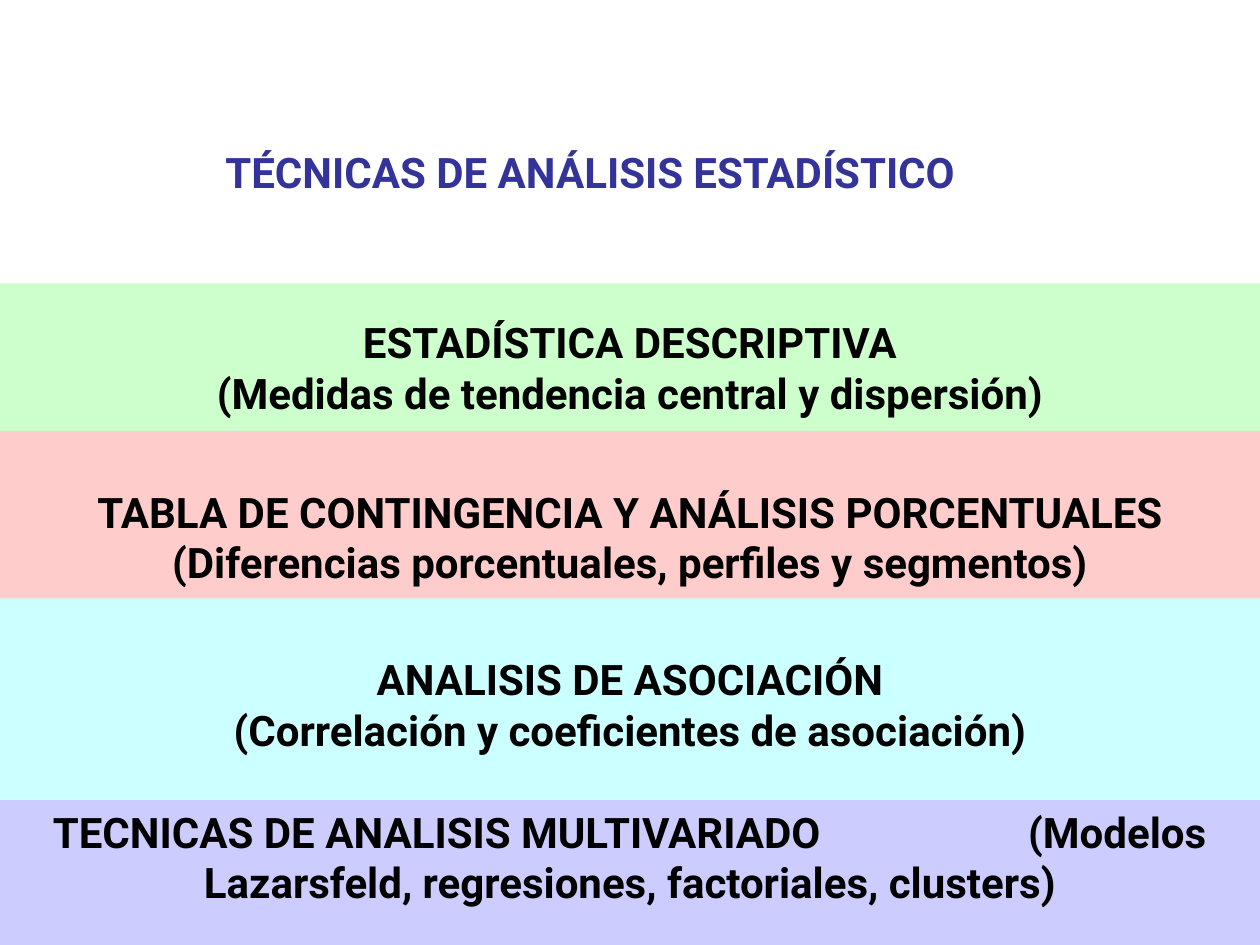
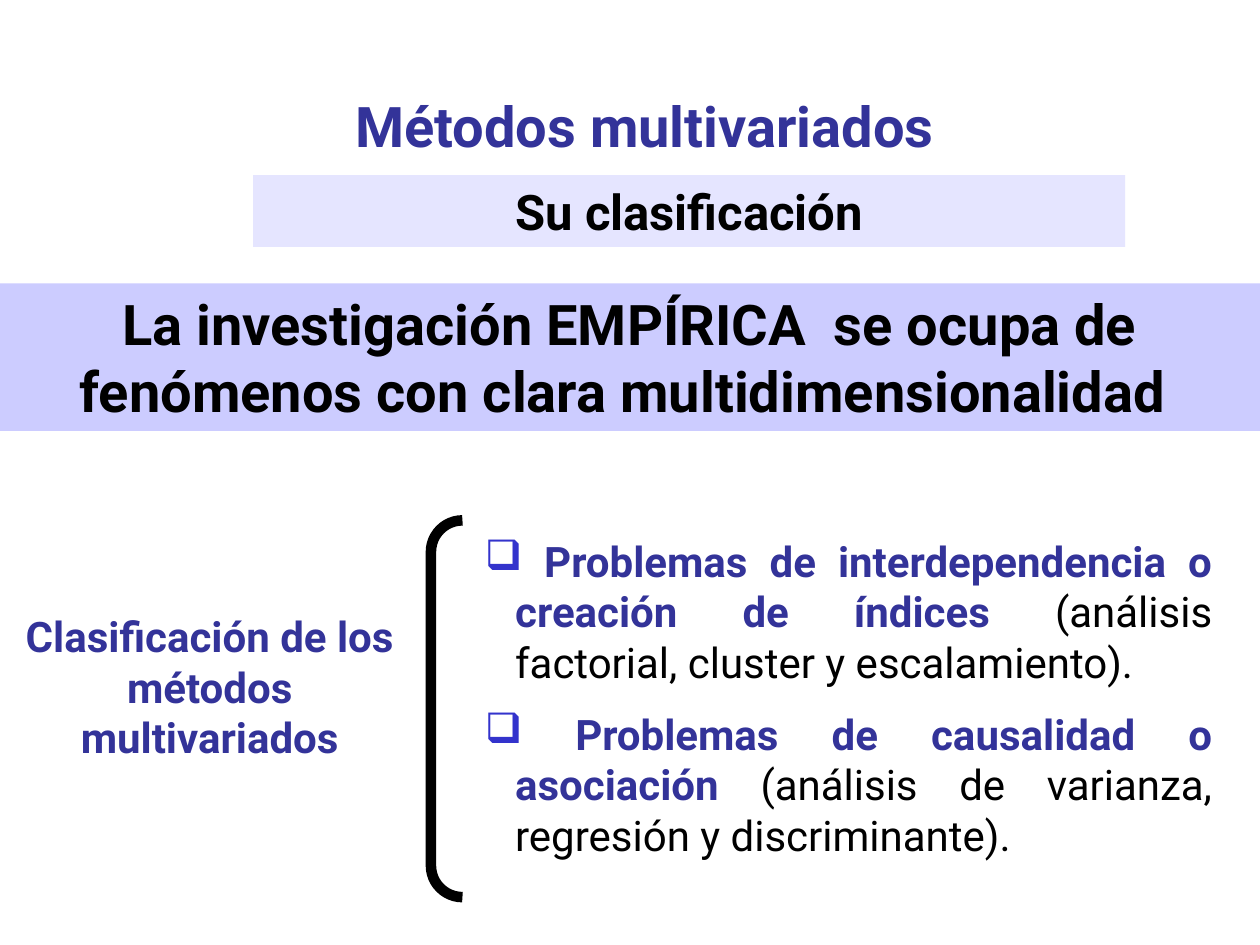
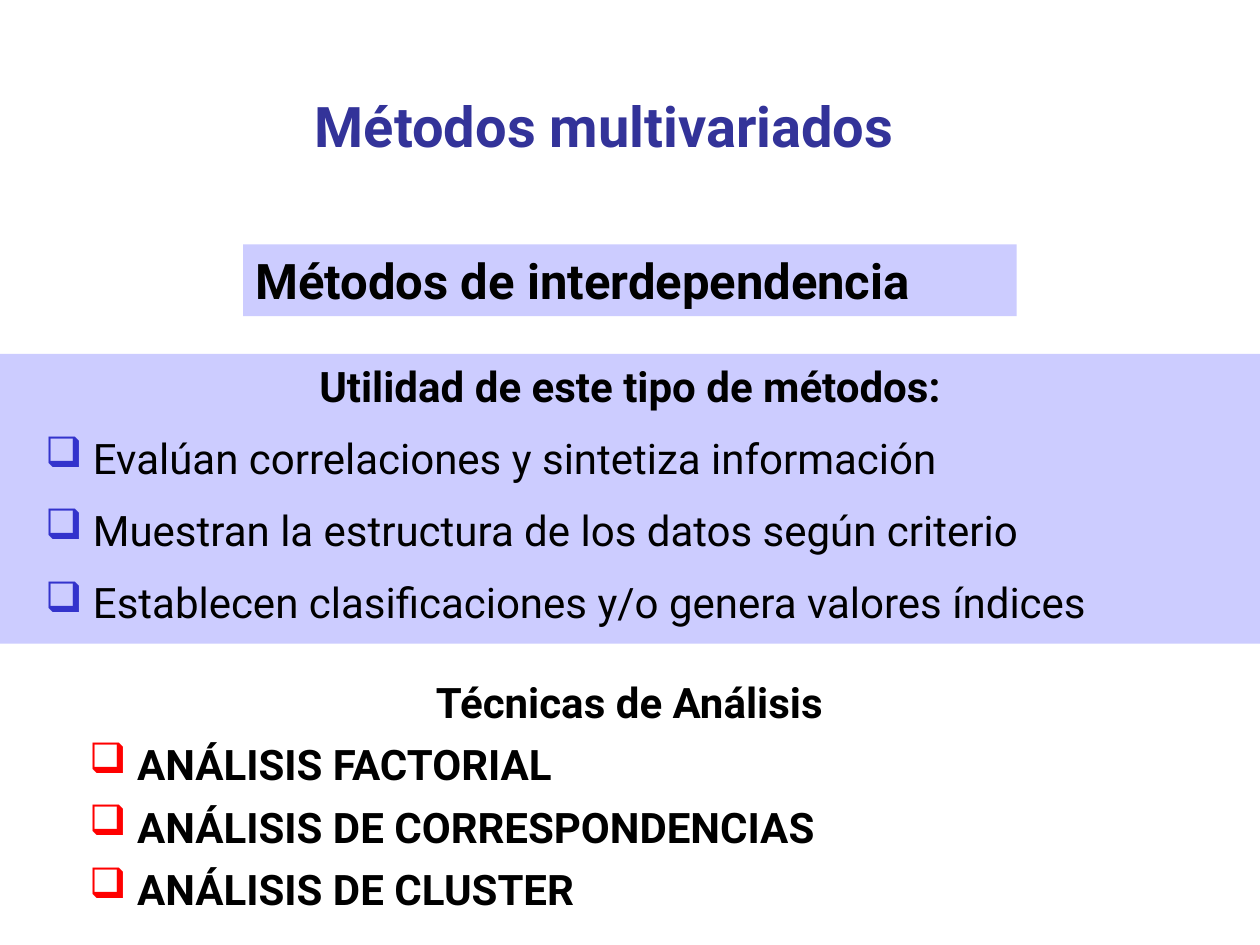
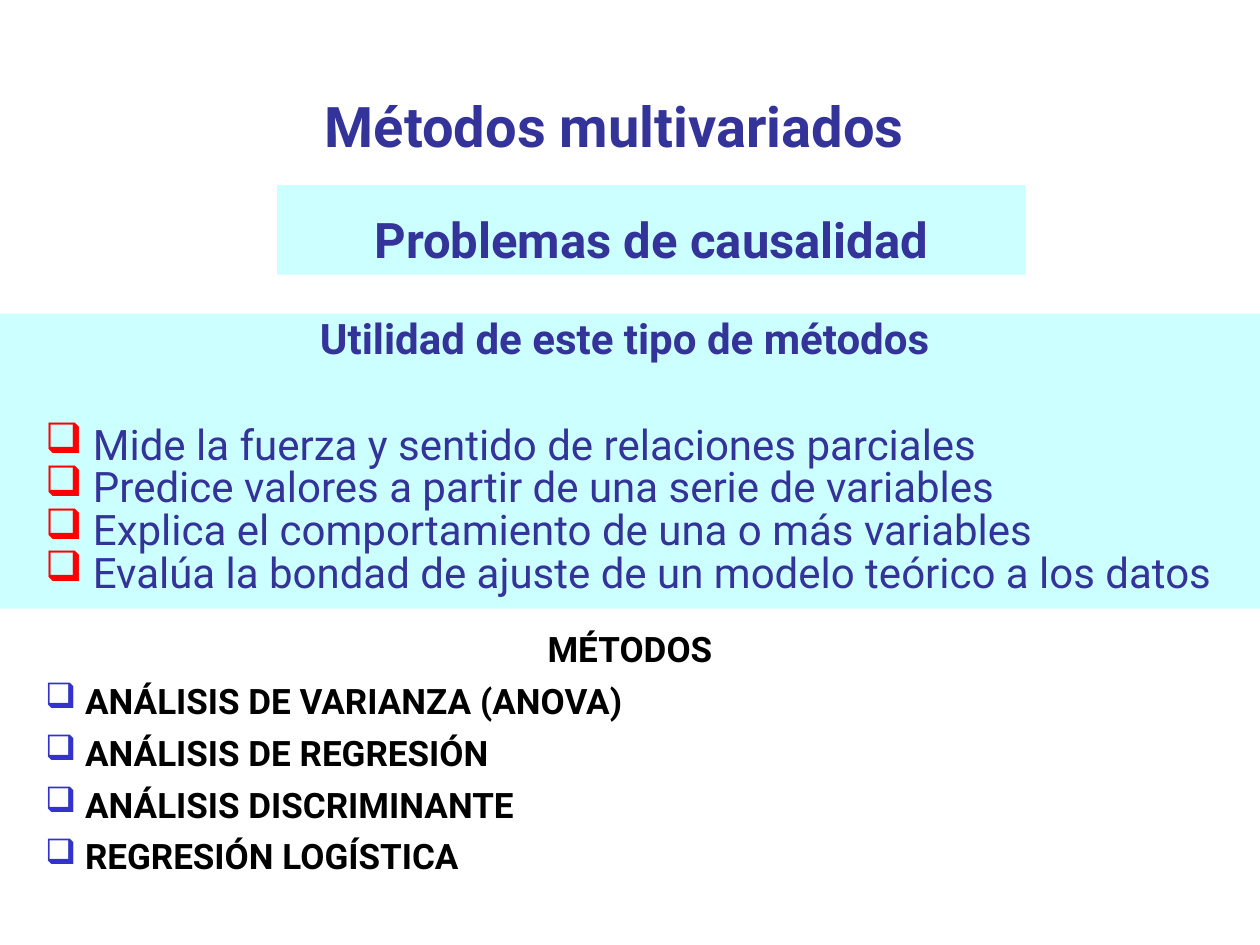
from dataclasses import dataclass
from typing import Optional

from lxml.etree import SubElement
from pptx import Presentation
from pptx.dml.color import RGBColor
from pptx.enum.shapes import MSO_SHAPE as Preset
from pptx.enum.text import MSO_ANCHOR as Anchor, PP_ALIGN as Align
from pptx.oxml.ns import qn
from pptx.util import Inches, Pt


@dataclass(frozen=True)
class Theme:
    font: str = "Roboto"
    black: str = "000000"
    navy: str = "333399"
    blue: str = "3333CC"
    red: str = "FF0000"
    green_band: str = "CCFFCC"
    pink_band: str = "FFCCCC"
    cyan_band: str = "CCFFFF"
    lilac_band: str = "CCCCFF"
    title: int = 32
    subtitle: int = 28
    body: int = 24
    small: int = 20
    gap: float = 0.52
    hanging: float = 0.24
    blank_line: float = 0.39


THEME = Theme()
METHODS_TITLE = "Métodos multivariados"


@dataclass
class Para:
    text: str = ""
    size: int = THEME.body
    color: str = THEME.black
    bold: bool = True
    align: Align = Align.CENTER
    before: float = 0
    spacing: Optional[float] = None
    bullet: Optional[str] = None
    indent: float = 0
    tab: Optional[float] = None
    phrases: tuple = ()


def add_bullet(properties, color, indent):
    properties.set("marL", str(Inches(indent)))
    properties.set("indent", str(Inches(-THEME.hanging)))
    bullet_color = SubElement(properties, qn("a:buClr"))
    SubElement(bullet_color, qn("a:srgbClr"), val=color)
    SubElement(properties, qn("a:buChar"), char="❑")


def add_tab(properties, position):
    stops = SubElement(properties, qn("a:tabLst"))
    SubElement(stops, qn("a:tab"), pos=str(Inches(position)), algn="l")


def format_run(run, size, color, bold):
    run.font.name = THEME.font
    run.font.size = Pt(size)
    run.font.bold = bold
    run.font.color.rgb = RGBColor.from_string(color)


def write(frame, paras):
    frame.word_wrap = True
    for index, para in enumerate(paras):
        line = frame.add_paragraph() if index else frame.paragraphs[0]
        line.alignment = para.align
        line.space_before = Pt(para.before)
        if para.spacing:
            line.line_spacing = para.spacing
        properties = line._p.get_or_add_pPr()
        if para.bullet:
            add_bullet(properties, para.bullet, para.indent)
        if para.tab:
            add_tab(properties, para.tab)
        if para.phrases:
            for text, color, bold in para.phrases:
                run = line.add_run()
                run.text = text
                format_run(run, para.size, color, bold)
        else:
            line.text = para.text
            for run in line.runs:
                format_run(run, para.size, para.color, para.bold)


def add_text(slide, place, *paras):
    box = slide.shapes.add_textbox(*map(Inches, place))
    write(box.text_frame, paras)


def add_band(slide, place, fill, *paras, anchor=Anchor.TOP, top=0.05, side=0.1, alpha=None):
    band = slide.shapes.add_shape(Preset.RECTANGLE, *map(Inches, place))
    band.shadow.inherit = False
    band.line.fill.background()
    band.fill.solid()
    band.fill.fore_color.rgb = RGBColor.from_string(fill)
    if alpha:
        tint = band._element.spPr.find(qn("a:solidFill")).find(qn("a:srgbClr"))
        SubElement(tint, qn("a:alpha"), val=str(alpha * 1000))
    frame = band.text_frame
    frame.vertical_anchor = anchor
    frame.margin_top = Inches(top)
    frame.margin_left = frame.margin_right = Inches(side)
    write(frame, paras)


def add_bracket(slide, place):
    bracket = slide.shapes.add_shape(Preset.LEFT_BRACKET, *map(Inches, place))
    bracket.shadow.inherit = False
    bracket.adjustments[0] = 1
    bracket.fill.background()
    bracket.line.color.rgb = RGBColor.from_string(THEME.black)
    bracket.line.width = Pt(6)


def add_methods_title(slide, left):
    add_text(slide, (left, 0.68, 5.29, 0.63),
             Para(METHODS_TITLE, THEME.title, THEME.navy, align=Align.LEFT))


def bullets(items, mark, size=THEME.body, before=None, **style):
    gap = size * THEME.gap if before is None else before
    return [Para(f" {item}", size, align=Align.LEFT, before=gap, bullet=mark, indent=0.5, **style)
            for item in items]


def build_techniques(slide):
    add_text(slide, (1.69, 1.11, 6.63, 0.5),
             Para("TÉCNICAS DE ANÁLISIS ESTADÍSTICO", color=THEME.navy, align=Align.LEFT))
    lowered = 0.05 + THEME.blank_line
    add_band(slide, (0, 2.25, 10, 1.33), THEME.green_band,
             Para("ESTADÍSTICA DESCRIPTIVA\n(Medidas de tendencia central y dispersión)"),
             anchor=Anchor.MIDDLE)
    add_band(slide, (0, 3.42, 10, 1.7), THEME.pink_band,
             Para("TABLA DE CONTINGENCIA Y ANÁLISIS PORCENTUALES "
                  "(Diferencias porcentuales, perfiles y segmentos)"), top=lowered)
    add_band(slide, (0, 4.75, 10, 1.7), THEME.cyan_band,
             Para("ANALISIS DE ASOCIACIÓN"),
             Para("(Correlación y coeficientes de asociación)"), top=lowered)
    add_band(slide, (0, 6.35, 10, 1.15), THEME.lilac_band,
             Para("TECNICAS DE ANALISIS MULTIVARIADO\t(Modelos", align=Align.LEFT, tab=7.74),
             Para("Lazarsfeld, regresiones, factoriales, clusters)"), side=0.42)


def build_classification(slide):
    add_text(slide, (0, 4.8, 3.33, 1.3),
             Para("Clasificación de los métodos multivariados", color=THEME.navy))
    problems = (
        ("Problemas de interdependencia o creación de índices",
         " (análisis factorial, cluster y escalamiento)."),
        ("Problemas de causalidad o asociación",
         " (análisis de varianza, regresión y discriminante). "),
    )
    add_text(slide, (3.75, 4.2, 5.97, 2.73), *[
        Para(align=Align.JUSTIFY, before=THEME.body * THEME.gap,
             bullet=THEME.blue, indent=THEME.hanging,
             phrases=((" ", THEME.navy, True), (problem, THEME.navy, True),
                      (examples, THEME.black, False)))
        for problem, examples in problems])
    add_bracket(slide, (3.42, 4.13, 0.25, 2.99))
    add_band(slide, (0, 2.25, 10, 1.17), THEME.lilac_band,
             Para("La investigación EMPÍRICA  se ocupa de fenómenos "
                  "con clara multidimensionalidad ", THEME.title))
    add_methods_title(slide, 2.72)
    add_band(slide, (2.01, 1.39, 6.92, 0.57), THEME.lilac_band,
             Para("Su clasificación", THEME.subtitle), alpha=50)


def build_interdependence(slide):
    uses = ("Evalúan correlaciones y sintetiza información",
            "Muestran la estructura de los datos según criterio",
            "Establecen clasificaciones y/o genera valores índices")
    techniques = ("ANÁLISIS FACTORIAL", "ANÁLISIS DE CORRESPONDENCIAS", "ANÁLISIS DE CLUSTER")
    add_band(slide, (0, 2.81, 10, 2.3), THEME.lilac_band,
             Para("Utilidad de este tipo de métodos:"),
             *bullets(uses, THEME.blue, bold=False))
    add_text(slide, (0.35, 5.32, 9.29, 2.06),
             Para("Técnicas de Análisis"),
             *bullets(techniques, THEME.red, spacing=0.8))
    add_band(slide, (1.93, 1.94, 6.14, 0.57), THEME.lilac_band,
             Para("Métodos de interdependencia", THEME.subtitle, align=Align.LEFT))
    add_methods_title(slide, 2.4)


def build_causality(slide):
    uses = ("Mide la fuerza y sentido de relaciones parciales",
            "Predice valores a partir de una serie de variables",
            "Explica el comportamiento de una o más variables",
            "Evalúa la bondad de ajuste de un modelo teórico a los datos")
    methods = ("ANÁLISIS DE VARIANZA (ANOVA)", "ANÁLISIS DE REGRESIÓN",
               "ANÁLISIS DISCRIMINANTE", "REGRESIÓN LOGÍSTICA")
    use_lines = bullets(uses, THEME.red, before=0, spacing=0.85, color=THEME.navy, bold=False)
    use_lines[0].before = 36
    add_band(slide, (0, 2.49, 10, 2.34), THEME.cyan_band,
             Para("Utilidad de este tipo de métodos ", color=THEME.navy, spacing=0.85),
             *use_lines)
    add_text(slide, (0, 4.93, 10, 2.57),
             Para("MÉTODOS", THEME.small),
             *bullets(methods, THEME.blue, THEME.small, spacing=0.8))
    add_band(slide, (2.2, 1.47, 5.94, 0.71), THEME.cyan_band,
             Para("Problemas de causalidad", THEME.subtitle, THEME.navy, spacing=1.3))
    add_methods_title(slide, 2.48)


def main():
    deck = Presentation()
    deck.slide_width, deck.slide_height = Inches(10), Inches(7.5)
    for build in (build_techniques, build_classification, build_interdependence, build_causality):
        build(deck.slides.add_slide(deck.slide_layouts[6]))
    deck.save("out.pptx")


if __name__ == "__main__":
    main()
